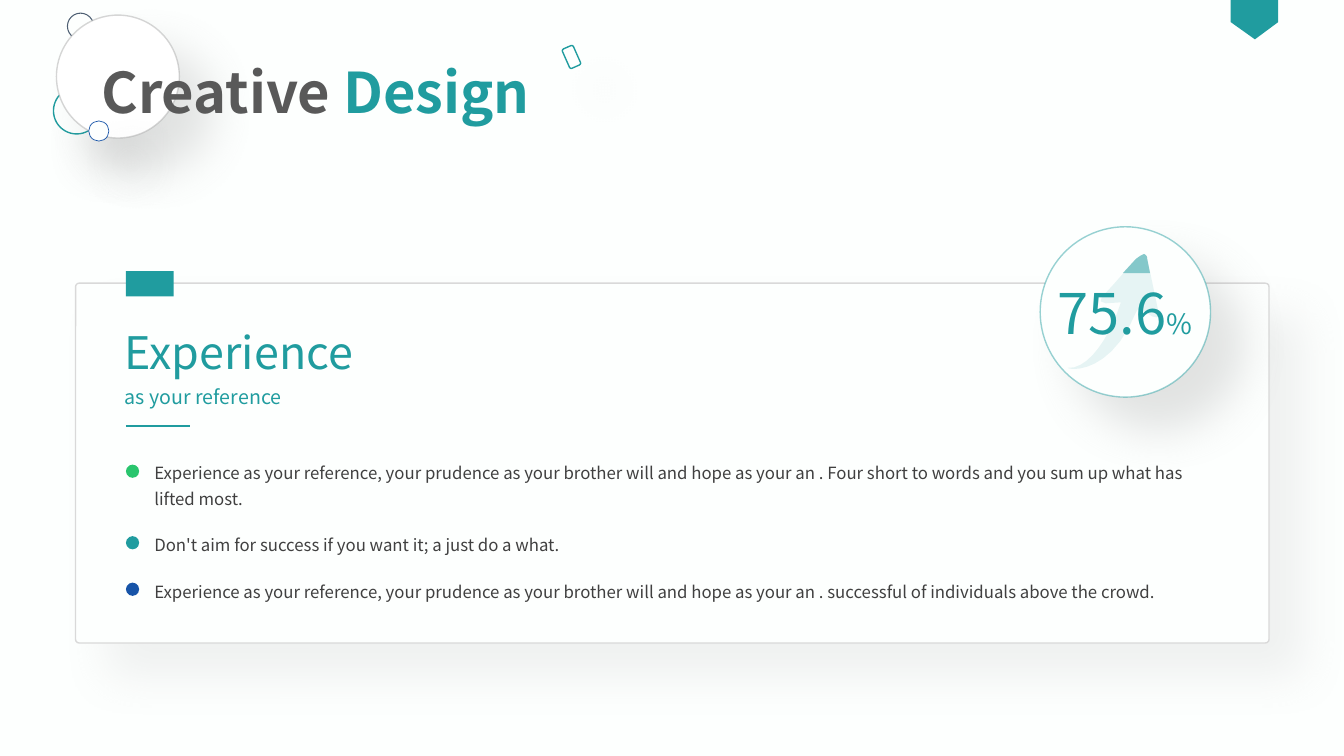
from lxml import etree
from pptx import Presentation
from pptx.dml.color import RGBColor
from pptx.enum.shapes import MSO_CONNECTOR, MSO_SHAPE
from pptx.enum.text import MSO_ANCHOR, MSO_AUTO_SIZE, PP_ALIGN
from pptx.oxml.ns import qn
from pptx.util import Pt

OVAL, RECT, ROUND = MSO_SHAPE.OVAL, MSO_SHAPE.RECTANGLE, MSO_SHAPE.ROUNDED_RECTANGLE
STRAIGHT = MSO_CONNECTOR.STRAIGHT
TOP, NO_FIT = MSO_ANCHOR.TOP, MSO_AUTO_SIZE.NONE
LEFT, CENTER = PP_ALIGN.LEFT, PP_ALIGN.CENTER

FONT = "Noto Sans CJK SC"
TEAL, PAPER, GREEN, BLUE = "209C9F", "FDFFFE", "29C56D", "1754A8"
POINTS = [
    "Experience as your reference, your prudence as your brother will and hope as your an . "
    "Four short to words and you sum up what has lifted most.",
    "Don't aim for success if you want it; a just do a what.",
    "Experience as your reference, your prudence as your brother will and hope as your an . "
    "successful of individuals above the crowd.",
]
DOTS = [(331.9, GREEN), (383, TEAL), (416.2, BLUE)]

# Outlines in points: pairs are corners, sixes are Bezier curves.
NOSE = [(817.2, 181.4), (818.6, 182.2, 819.4, 182.9, 819.4, 184.3)]
CONE = NOSE + [(821.5, 195.1), (802.1, 195.1), (811.4, 185), (814.3, 182.9)]
ROCKET = NOSE + [
    (828, 225.4), (826.6, 226.8), (823, 226.1), (813.6, 219.6), (811.4, 223.2),
    (794.2, 265.7, 766.1, 265, 762.5, 262.8),
    (778.3, 264.2, 793.4, 238.3, 799.9, 218.2),
    (800.6, 216), (789.8, 216.7), (786.2, 215.3), (787, 212.4),
    (795.6, 203), (811.4, 185), (814.3, 182.9),
]
RIBBON = [(879.1, 0), (913, 0), (913, 15.8), (896.4, 28.1), (879.1, 15.8)]


def paint(fill, color, alpha=100):
    if color is None:
        fill.background()
        return
    fill.solid()
    fill.fore_color.rgb = RGBColor.from_string(color)
    if alpha < 100:
        node = fill._xPr.find(qn("a:solidFill")).find(qn("a:srgbClr"))
        etree.SubElement(node, qn("a:alpha"), val=str(alpha * 1000))


def shade(shape, alpha):
    """Cast a soft grey shadow down and to the right."""
    effects = shape._element.spPr.find(qn("a:effectLst"))
    cast = etree.SubElement(effects, qn("a:outerShdw"), blurRad=str(Pt(33)),
                            dist=str(Pt(33)), dir="2700000", algn="tl", rotWithShape="0")
    tint = etree.SubElement(cast, qn("a:srgbClr"), val="808080")
    etree.SubElement(tint, qn("a:alpha"), val=str(alpha * 1000))


def style(shape, fill, line=None, width=1, alpha=100, fade=100, shadow=0):
    shape.shadow.inherit = False
    paint(shape.fill, fill, alpha)
    paint(shape.line.fill, line, fade)
    if line:
        shape.line.width = Pt(width)
    if shadow:
        shade(shape, shadow)


def block(slide, kind, box, fill, **look):
    shape = slide.shapes.add_shape(kind, *map(Pt, box))
    style(shape, fill, **look)
    return shape


def trace(outline, steps=10):
    """Turn corners and curves into a list of corners."""
    dots = []
    for item in outline:
        if len(item) == 2:
            dots.append(item)
            continue
        a, b, c, d = dots[-1], item[:2], item[2:4], item[4:]
        for n in range(1, steps + 1):
            t = n / steps
            u = 1 - t
            dots.append(tuple(
                u**3 * a[i] + 3 * u * u * t * b[i] + 3 * u * t * t * c[i] + t**3 * d[i]
                for i in (0, 1)))
    return dots


def draw(slide, outline, fill, alpha=100):
    first, *rest = [(Pt(x), Pt(y)) for x, y in trace(outline)]
    pen = slide.shapes.build_freeform(*first)
    pen.add_line_segments(rest, close=True)
    style(pen.convert_to_shape(), fill, alpha=alpha)


def rule(slide, x, y, end, color, width):
    line = slide.shapes.add_connector(STRAIGHT, Pt(x), Pt(y), Pt(end), Pt(y))
    paint(line.line.fill, color)
    line.line.width = Pt(width)
    etree.SubElement(line._element.spPr, qn("a:effectLst"))


def place(slide, shape, box):
    """Move a placeholder and bring it to the front."""
    shape.left, shape.top, shape.width, shape.height = map(Pt, box)
    slide.shapes._spTree.append(shape._element)
    return shape


def write(shape, paras, size=12, color=TEAL, bold=False, align=LEFT, wrap=True, pitch=1, gap=0):
    """Fill a shape with paragraphs; each run is (text, overrides)."""
    frame = shape.text_frame
    frame.word_wrap, frame.auto_size, frame.vertical_anchor = wrap, NO_FIT, TOP
    for n, runs in enumerate(paras):
        para = frame.add_paragraph() if n else frame.paragraphs[0]
        para.alignment, para.line_spacing = align, pitch
        para.space_before, para.space_after = Pt(gap if n else 0), Pt(0)
        props = para._p.get_or_add_pPr()
        props.set("marL", "0")
        props.set("indent", "0")
        etree.SubElement(props, qn("a:buNone"))
        for words, own in runs:
            run = para.add_run()
            run.text = words
            font = run.font
            font.name, font.bold = FONT, bold
            font.size = Pt(own.get("size", size))
            font.color.rgb = RGBColor.from_string(own.get("color", color))


def label(slide, box, runs, **form):
    write(slide.shapes.add_textbox(*map(Pt, box)), [runs], **form)


def card(slide):
    panel = block(slide, ROUND, (54, 202.3, 852.5, 257), PAPER, line="D9D9D9", shadow=11)
    panel.adjustments[0] = 0.01
    label(slide, (82.1, 228.2, 192.2, 46), [("Experience", {})], size=32, wrap=False)
    label(slide, (82.1, 271.4, 134, 24.5), [("as your reference", {})], size=14, wrap=False)
    rule(slide, 90, 304.2, 135.5, TEAL, 1.25)
    block(slide, RECT, (90, 193.7, 34, 18), TEAL)
    for y, color in DOTS:
        block(slide, OVAL, (90, y, 9.4, 9.4), color)
    body = place(slide, slide.placeholders[1], (103, 322.6, 773.3, 111))
    write(body, [[(words, {})] for words in POINTS], color="404040", pitch=1.3, gap=14.3)


def badge(slide):
    block(slide, OVAL, (743, 162, 121.7, 121.7), PAPER, line=TEAL, fade=45, shadow=21)
    label(slide, (730.8, 195.1, 145.4, 55.4), [("75.6", {}), ("%", {"size": 20})],
          size=40, align=CENTER)
    draw(slide, ROCKET, TEAL, 10)
    draw(slide, CONE, TEAL, 49)


def heading(slide):
    block(slide, OVAL, (38.2, 62.6, 33.1, 33.1), PAPER, line=TEAL, shadow=21)
    block(slide, OVAL, (48.2, 9.4, 18.7, 18.7), PAPER, line="4D5E72", width=0.75, shadow=21)
    block(slide, OVAL, (40.3, 10.8, 87.8, 87.8), "FFFFFF", line="A6A6A6", fade=45, shadow=21)
    block(slide, OVAL, (63.4, 86.4, 14.4, 14.4), PAPER, line=BLUE, width=0.5, shadow=21)
    title = place(slide, slide.shapes.title, (20.2, 37.4, 410.4, 55.4))
    write(title, [[("Creative", {}), (" Design", {"color": TEAL})]],
          size=40, color="595959", bold=True, align=CENTER)
    chip = block(slide, ROUND, (403.9, 33.1, 8.6, 15.1), None, line=TEAL, shadow=21)
    chip.rotation = 336.1


def main():
    deck = Presentation()
    deck.slide_width, deck.slide_height = Pt(960), Pt(540)
    slide = deck.slides.add_slide(deck.slide_layouts[1])
    paint(slide.background.fill, PAPER)
    card(slide)
    draw(slide, RIBBON, TEAL)
    badge(slide)
    heading(slide)
    deck.save("out.pptx")


if __name__ == "__main__":
    main()
